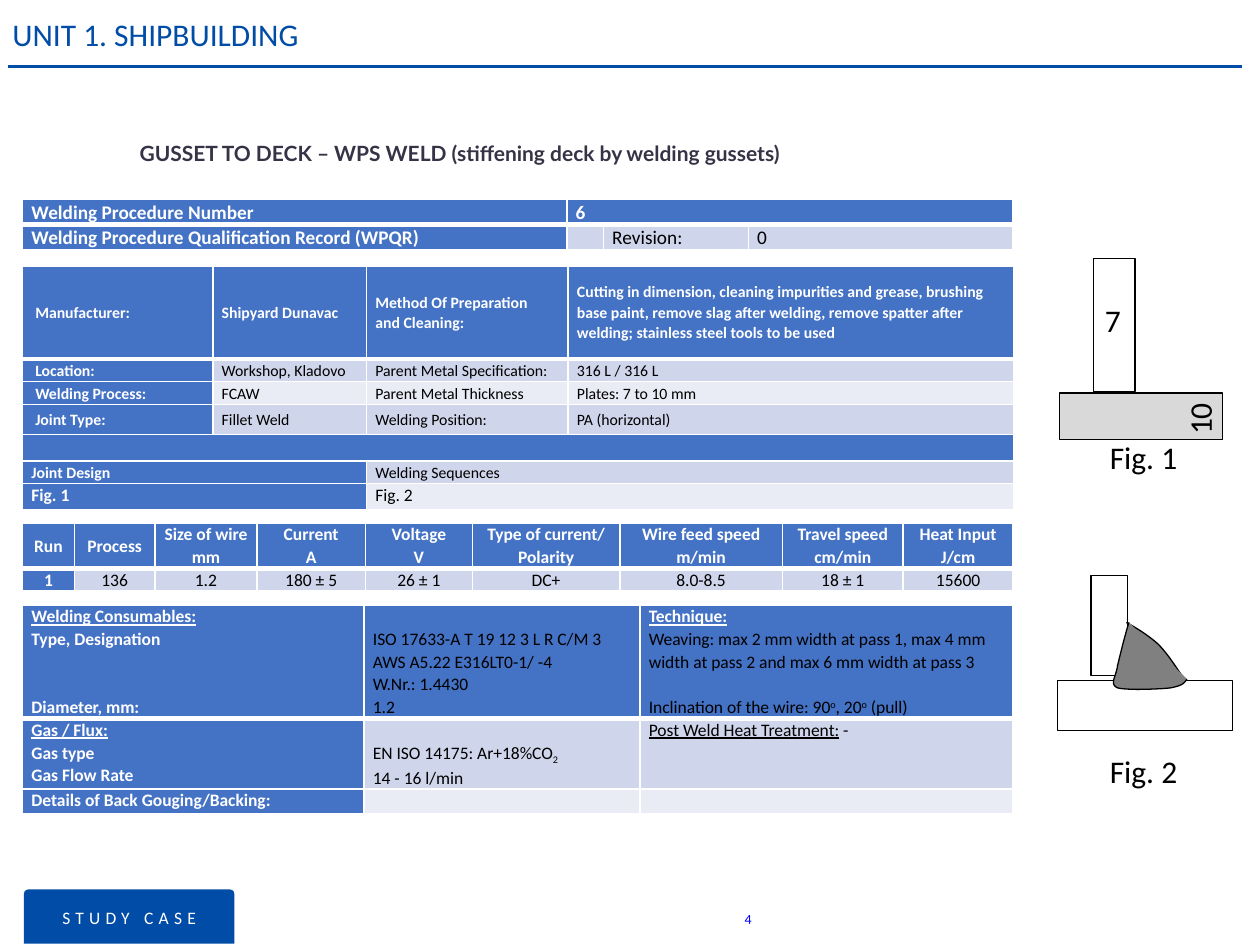
import pptx
import pptx.util
import pptx.dml.color
import pptx.enum.shapes
import pptx.enum.text
import pptx.oxml.ns
from lxml import etree

Inches, Pt = pptx.util.Inches, pptx.util.Pt
ALIGN, ANCHOR = pptx.enum.text.PP_ALIGN, pptx.enum.text.MSO_ANCHOR
SHAPE = pptx.enum.shapes.MSO_SHAPE
NAVY, HEAD, ODD_BAND, EVEN_BAND = "004CA6", "4472C4", "CFD5EA", "E9EBF5"
WHITE, BLACK, GREY = "FFFFFF", "000000", "808080"
LINE_PITCH = 13 / 72

TABLES = [
    dict(
        top=1.58, columns=[4.32, 0.29, 1.15, 2.1], heights=[0.19, 0.19], size=11,
        top_cells=[(0, 0), (0, 1), (1, 0)], merges=[(0, 1, 3)],
        rows=[
            ["Welding Procedure Number", "6", "", ""],
            ["Welding Procedure Qualification Record (WPQR)", "", "Revision:", "0"],
        ]),
    dict(
        top=2.11, columns=[1.51, 1.22, 1.6, 3.54], size=9, row_sizes={6: 10},
        heights=[0.74, 0.18, 0.18, 0.24, 0.21, 0.18, 0.21], indented_rows=4,
        top_cells=[(6, 0), (6, 2)], merges=[(4, 0, 3), (5, 0, 1), (5, 2, 3), (6, 0, 1), (6, 2, 3)],
        rows=[
            ["Manufacturer:", "Shipyard Dunavac", "Method Of Preparation\nand Cleaning:",
             "Cutting in dimension, cleaning impurities and grease, brushing base paint, "
             "remove slag after welding, remove spatter after welding; "
             "stainless steel tools to be used"],
            ["Location:", "Workshop, Kladovo", "Parent Metal Specification:", "316 L / 316 L"],
            ["Welding Process:", "FCAW", "Parent Metal Thickness", "Plates: 7 to 10 mm"],
            ["Joint Type:", "Fillet Weld", "Welding Position:", "PA (horizontal)"],
            ["", "", "", ""],
            ["Joint Design", "", "Welding Sequences", ""],
            ["Fig. 1", "", "Fig. 2", ""],
        ]),
    dict(
        top=4.15, columns=[0.41, 0.64, 0.81, 0.86, 0.85, 1.17, 1.29, 0.96, 0.87],
        heights=[0.35, 0.17], size=10, align=ALIGN.CENTER,
        rows=[
            ["Run", "Process", "Size of wire\nmm", "Current\nA", "Voltage\nV",
             ["Type of current/", "Polarity"], ["Wire feed speed", "m/min"],
             ["Travel speed", "cm/min"], ["Heat Input", "J/cm"]],
            ["1", "136", "1.2", "180 ± 5", "26 ± 1", "DC+", "8.0-8.5", "18 ± 1", "15600"],
        ]),
    dict(
        top=4.8, columns=[2.71, 2.19, 2.96], heights=[0.89, 0.56, 0.2], size=10,
        top_cells=[(row, column) for row in range(3) for column in range(3)],
        plain_cells=[(0, 1), (0, 2)],
        gaps={(0, 0, 1): 2, (0, 1, 0): 1, (0, 2, 2): 1, (1, 1, 0): 1},
        rows=[
            [[[("Welding Consumables:", "underline"), "\nType, Designation"], "Diameter, mm:"],
             ["ISO 17633-A T 19 12 3 L R C/M 3", "AWS A5.22 E316LT0-1/ -4", "W.Nr.: 1.4430", "1.2"],
             [[("Technique:", "underline head")],
              "Weaving: max 2 mm width at pass 1, max 4 mm width at pass 2 "
              "and max 6 mm width at pass 3",
              ["Inclination of the wire: 90", ("o", "raised"), ", 20", ("o", "raised"), " (pull)"]]],
            [[[("Gas / Flux:", "underline"), "\nGas type"], "Gas Flow Rate"],
             [["EN ISO 14175: Ar+18%CO", ("2", "lowered")], "14 - 16 l/min"],
             [[("Post Weld Heat Treatment:", "underline"), " -"]]],
            ["Details of Back Gouging/Backing:", "", ""],
        ]),
]

TEXTS = [
    dict(text="UNIT 1. SHIPBUILDING", at=(0, 0.05, 4.01, 0.44), size=18, color=NAVY, middle=True),
    dict(text="GUSSET TO DECK – WPS WELD (stiffening deck by welding gussets)",
         at=(1.01, 1.07, 7.04, 0.3), size=12, color="363346", font="Lato", bold=True),
    dict(text="4", at=(5.91, 7.23, 0.06, 0.2), size=8, color="0000FF", inset=0, wrap=False),
    dict(text="Fig. 1", at=(8.71, 3.43, 0.74, 0.4), wrap=False),
    dict(text="Fig. 2", at=(8.71, 5.92, 0.74, 0.4), wrap=False),
    dict(text="7", at=(8.67, 2.34, 0.33, 0.4), wrap=False),
    dict(text="10", at=(9.29, 3.12, 0.46, 0.4), wrap=False, rotation=270),
]

PLATES = [
    ((8.66, 4.57, 0.29, 0.79), WHITE), ((8.39, 5.4, 1.39, 0.4), WHITE),
    ((8.68, 2.05, 0.33, 1.06), WHITE), ((8.41, 3.12, 1.29, 0.37), "D9D9D9"),
]

WELD_CURVES = [
    [(8.94, 4.94), (9.03, 4.99), (9.11, 5.04), (9.19, 5.11), (9.27, 5.19), (9.33, 5.29), (9.4, 5.39)],
    [(8.96, 4.94), (8.92, 5.07), (8.89, 5.2), (8.87, 5.28), (8.86, 5.37), (8.8, 5.43), (8.87, 5.46),
     (8.94, 5.48), (9.2, 5.47), (9.29, 5.46), (9.39, 5.44), (9.4, 5.42), (9.42, 5.39)],
]


def rgb(color):
    return pptx.dml.color.RGBColor.from_string(color)


def paint(shape, fill, line=None):
    shape.shadow.inherit = False
    shape.fill.solid()
    shape.fill.fore_color.rgb = rgb(fill)
    if line:
        shape.line.color.rgb = rgb(line)
        shape.line.width = Pt(0.75)
    else:
        shape.line.fill.background()


def set_font(font, size, color, name="Calibri", bold=False):
    font.size, font.name, font.bold = Pt(size), name, bold
    font.color.rgb = rgb(color)


def add_text(page, text, at, size=18, color=BLACK, font="Calibri", bold=False,
             middle=False, inset=None, wrap=True, rotation=0):
    box = page.shapes.add_textbox(*map(Inches, at))
    box.rotation = rotation
    frame = box.text_frame
    frame.word_wrap = wrap
    if middle:
        frame.vertical_anchor = ANCHOR.MIDDLE
    if inset is not None:
        frame.margin_left = frame.margin_right = frame.margin_top = frame.margin_bottom = Inches(inset)
    para = frame.paragraphs[0]
    para.text = text
    set_font(para.font, size, color, font, bold)


def add_borders(cell, bottom_width):
    properties = cell._tc.get_or_add_tcPr()
    for side, width in (("L", 1), ("R", 1), ("T", 1), ("B", bottom_width)):
        line = etree.SubElement(properties, pptx.oxml.ns.qn("a:ln" + side), w=str(Pt(width)))
        fill = etree.SubElement(line, pptx.oxml.ns.qn("a:solidFill"))
        etree.SubElement(fill, pptx.oxml.ns.qn("a:srgbClr"), val=WHITE)


def add_runs(para, content, size, heading):
    set_font(para.font, size, WHITE if heading else BLACK, bold=heading)
    for piece in [content] if isinstance(content, str) else content:
        text, style = (piece, "") if isinstance(piece, str) else piece
        for index, part in enumerate(text.split("\n")):
            if index:
                para.add_line_break()
            if not part:
                continue
            span = para.add_run()
            span.text = part
            strong = heading or "head" in style
            set_font(span.font, size, WHITE if strong else BLACK, bold=strong)
            span.font.underline = "underline" in style
            shift = 30000 if "raised" in style else -25000 if "lowered" in style else 0
            if shift:
                span.font._element.set("baseline", str(shift))
    if not content:
        etree.SubElement(para._p, pptx.oxml.ns.qn("a:endParaRPr"), sz=str(size * 100))


def fill_cell(cell, content, row, column, table):
    head = row == 0 or column == 0
    add_borders(cell, 3 if row == 0 else 1)
    cell.fill.solid()
    cell.fill.fore_color.rgb = rgb(HEAD if head else ODD_BAND if row % 2 else EVEN_BAND)
    gaps = table.get("gaps", {})
    indented = column == 0 and row < table.get("indented_rows", 0)
    cell.margin_left, cell.margin_right = Inches(0.1 if indented else 0.07), Inches(0.07)
    cell.margin_top, cell.margin_bottom = Inches(gaps.get((row, column, 0), 0) * LINE_PITCH), 0
    cell.vertical_anchor = ANCHOR.TOP if (row, column) in table.get("top_cells", []) else ANCHOR.MIDDLE
    size = table.get("row_sizes", {}).get(row, table["size"])
    heading = head and (row, column) not in table.get("plain_cells", [])
    frame = cell.text_frame
    for index, paragraph in enumerate([content] if isinstance(content, str) else content):
        para = frame.add_paragraph() if index else frame.paragraphs[0]
        para.alignment = table.get("align", ALIGN.LEFT)
        para.line_spacing = 1.07
        if index and (row, column, index) in gaps:
            para.space_before = Pt(gaps[row, column, index] * LINE_PITCH * 72)
        add_runs(para, paragraph, size, heading)


def build_table(page, table):
    columns, heights = table["columns"], table["heights"]
    grid = page.shapes.add_table(
        len(heights), len(columns), Inches(0.18), Inches(table["top"]),
        Inches(sum(columns)), Inches(sum(heights))).table
    grid.first_row = grid.horz_banding = False
    for column, width in zip(grid.columns, columns):
        column.width = Inches(width)
    for row, height in zip(grid.rows, heights):
        row.height = Inches(height)
    for row, contents in enumerate(table["rows"]):
        for column, content in enumerate(contents):
            fill_cell(grid.cell(row, column), content, row, column, table)
    for row, first, last in table.get("merges", []):
        grid.cell(row, first).merge(grid.cell(row, last))


def curve_points(controls, steps=10):
    points = [controls[0]]
    for start in range(0, len(controls) - 1, 3):
        a, b, c, d = controls[start:start + 4]
        for t in (step / steps for step in range(1, steps + 1)):
            weights = ((1 - t) ** 3, 3 * t * (1 - t) ** 2, 3 * t * t * (1 - t), t ** 3)
            points.append(tuple(sum(w * p[axis] for w, p in zip(weights, (a, b, c, d))) for axis in (0, 1)))
    return [(Inches(x), Inches(y)) for x, y in points]


def main():
    deck = pptx.Presentation()
    deck.slide_width, deck.slide_height = Inches(10), Inches(7.5)
    page = deck.slides.add_slide(deck.slide_layouts[6])
    rule = page.shapes.add_connector(
        pptx.enum.shapes.MSO_CONNECTOR.STRAIGHT, *map(Inches, (0.06, 0.53, 9.86, 0.53)))
    rule.line.color.rgb, rule.line.width = rgb(NAVY), Pt(1.5)
    etree.SubElement(rule._element.spPr, pptx.oxml.ns.qn("a:effectLst"))
    tab = page.shapes.add_shape(SHAPE.ROUND_2_SAME_RECTANGLE, *map(Inches, (0.19, 7.06, 1.67, 0.43)))
    tab.adjustments[0], tab.adjustments[1] = 0.08, 0
    paint(tab, NAVY)
    tab.text_frame.vertical_anchor = ANCHOR.MIDDLE
    para = tab.text_frame.paragraphs[0]
    para.text, para.alignment = "STUDY CASE", ALIGN.CENTER
    set_font(para.font, 10, WHITE)
    para.runs[0].font._element.set("spc", "300")
    for table in TABLES:
        build_table(page, table)
    for at, fill in PLATES:
        paint(page.shapes.add_shape(SHAPE.RECTANGLE, *map(Inches, at)), fill, BLACK)
    for controls in WELD_CURVES:
        points = curve_points(controls)
        builder = page.shapes.build_freeform(*points[0])
        builder.add_line_segments(points[1:], close=False)
        paint(builder.convert_to_shape(), GREY, BLACK)
    for text in TEXTS:
        add_text(page, **text)
    deck.save("out.pptx")


if __name__ == "__main__":
    main()
